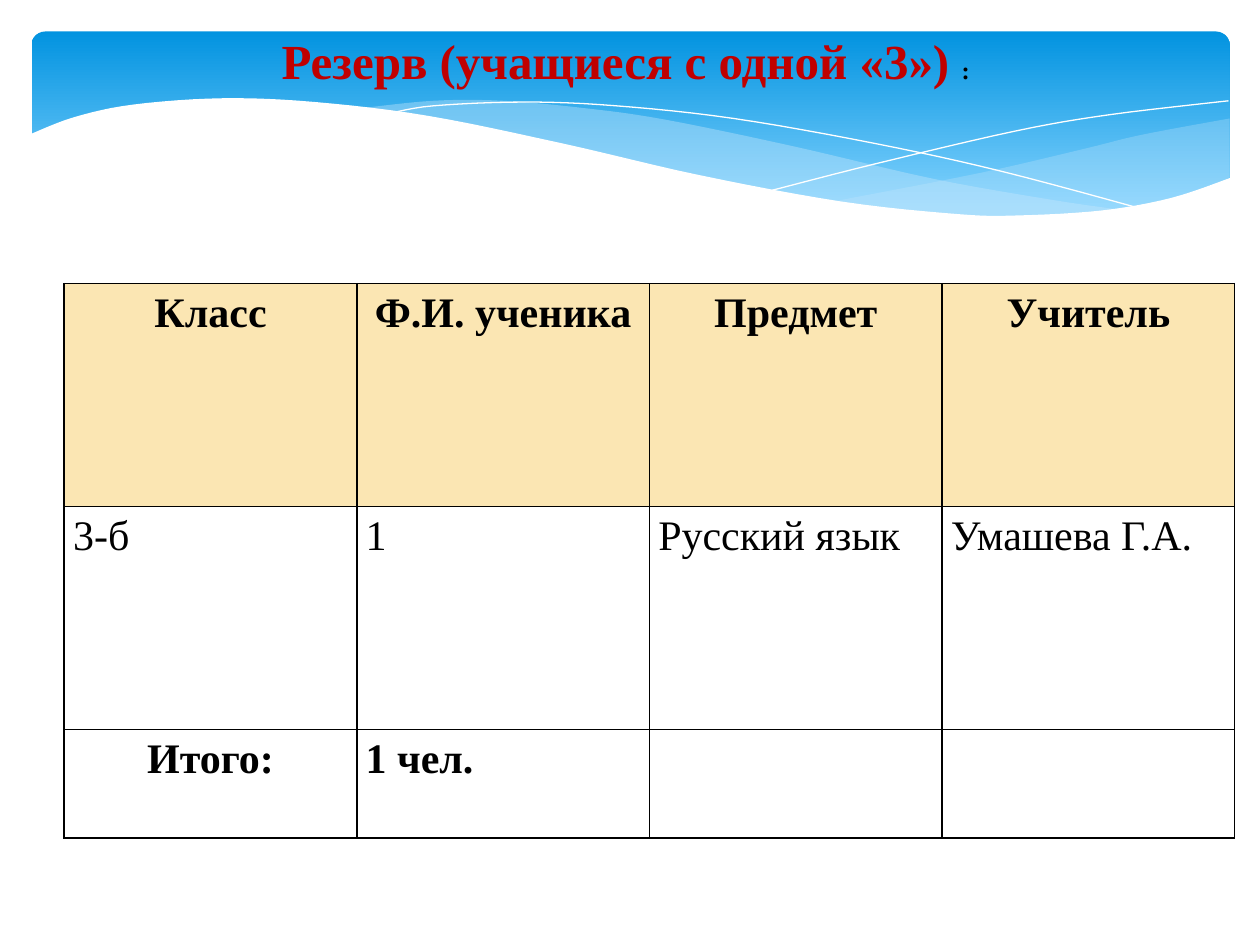
import itertools

import lxml.etree
import pptx
import pptx.dml.color
import pptx.enum.dml
import pptx.enum.shapes
import pptx.enum.text
import pptx.oxml
import pptx.oxml.ns
import pptx.util

ALIGN = pptx.enum.text.PP_ALIGN
CELL = pptx.util.Inches(0.1)
THEME = {
    "font": "Times New Roman", "title_size": 28, "mark_size": 14, "table_size": 24,
    "accent": "C00000", "text": "000000", "header": "FBE6B3", "white": "FFFFFF",
    "band": [(0, "0293E0"), (0.9, "83D3FE")], "wave": "C6E7FC",
}
RIGHT_WAVE = [
    [(95.1, 6.9), (88.1, 8.2), (83.6, 9.3), (75.4, 11.2), (63.6, 13.5)],
    [(63.6, 13.5), (70.7, 14.3), (77.8, 14.7), (83.8, 14.5), (90.3, 13.3), (95.1, 11.6)],
]
MIDDLE_WAVE = [
    [(26.1, 6.1), (31.9, 5.5), (37.4, 5.5), (44, 6.1), (50.3, 7), (60.4, 9.1),
     (71.6, 11.7), (81.2, 13.4), (86.8, 14.2)],
    [(86.8, 14.2), (78.2, 14.8), (71.1, 14.5), (62.5, 13.3), (54.1, 11.8), (42.4, 9.1),
     (33.7, 7.2), (26.1, 6.1)],
]
FALLING_LINE = [[(28.4, 6.5), (31.9, 5.9), (39.1, 5.6), (46.4, 5.9), (55.7, 6.9),
                 (67, 8.9), (77, 11.1), (88.2, 14.1)]]
RISING_LINE = [[(58.8, 12.6), (67, 10.5), (78.1, 7.9), (85.6, 6.6), (95, 5.5)]]
WHITE_WAVE = [
    [(-0.2, 8.2), (3.4, 6.8), (8.1, 5.8), (15.2, 5.3), (22.5, 5.6), (31.5, 6.7),
     (42.2, 8.9), (53, 11.4), (64.3, 13.5), (73.6, 14.5), (78.4, 14.6), (85, 14.2),
     (90.5, 13.2), (95.2, 11.6)],
    [(95.2, 19.9), (-0.2, 19.9)],
]


def rgb(name):
    """Return a colour from a theme key or a hex value."""
    return pptx.dml.color.RGBColor.from_string(THEME.get(name, name))


def grid(*cells):
    """Turn grid cells into whole lengths."""
    return [round(n * CELL) for n in cells]


def apply(obj, formats):
    """Set every attribute in a dict of format values."""
    for name, value in formats.items():
        setattr(obj, name, value)


def smooth(knots, steps=6):
    """Return points on a Catmull-Rom curve through the knots."""
    if len(knots) < 3:
        return knots
    padded = [knots[0], *knots, knots[-1]]
    points = [knots[0]]
    for a, b, c, d in zip(padded, padded[1:], padded[2:], padded[3:]):
        for t in (i / steps for i in range(1, steps + 1)):
            points.append(tuple(
                (2 * q + (r - p) * t + (2 * p - 5 * q + 4 * r - s) * t ** 2
                 + (3 * q - p - 3 * r + s) * t ** 3) / 2
                for p, q, r, s in zip(a, b, c, d)))
    return points


def add_curve(slide, box, runs, fill=None, alpha=None):
    """Draw a filled wave, or a white hairline when no fill is given."""
    points = [grid(box[0] + x, box[1] + y)
              for x, y in itertools.chain.from_iterable(map(smooth, runs))]
    builder = slide.shapes.build_freeform(*points[0], scale=1.0)
    builder.add_line_segments(points[1:], close=fill is not None)
    sp = builder.convert_to_shape()
    sp.shadow.inherit = False
    if fill is None:
        sp.fill.background()
        sp.line.color.rgb = rgb("white")
        sp.line.width = 0
        return
    sp.fill.solid()
    sp.fill.fore_color.rgb = rgb(fill)
    sp.line.fill.background()
    if alpha:
        color = sp.fill._xPr.find(".//" + pptx.oxml.ns.qn("a:srgbClr"))
        lxml.etree.SubElement(color, pptx.oxml.ns.qn("a:alpha"), val=str(alpha * 1000))


def add_banner(slide, box):
    """Draw the blue gradient band and the waves that cut it."""
    sp = slide.shapes.add_shape(
        pptx.enum.shapes.MSO_SHAPE.ROUNDED_RECTANGLE, *grid(*box))
    sp.adjustments[0] = 0.07
    sp.shadow.inherit = False
    sp.line.fill.background()
    sp.fill.gradient()
    sp.fill.gradient_angle = 270
    for stop, (position, color) in zip(sp.fill.gradient_stops, THEME["band"]):
        stop.position = position
        stop.color.rgb = rgb(color)
    add_curve(slide, box, RIGHT_WAVE, "wave", 29)
    add_curve(slide, box, MIDDLE_WAVE, "wave", 40)
    add_curve(slide, box, FALLING_LINE)
    add_curve(slide, box, RISING_LINE)
    add_curve(slide, box, WHITE_WAVE, "white")


def add_run(p, text, size, color, bold):
    """Add one formatted run to a paragraph."""
    r = p.add_run()
    r.text = text
    apply(r.font, {"name": THEME["font"], "size": pptx.util.Pt(THEME[size]), "bold": bold})
    r.font.color.rgb = rgb(color)


def add_title(slide, box):
    """Place the title in front of the banner."""
    sp = slide.shapes.title
    apply(sp, dict(zip(("left", "top", "width", "height"), grid(*box))))
    slide.shapes._spTree.append(sp._element)
    tf = sp.text_frame
    apply(tf, {"word_wrap": False,
               "auto_size": pptx.enum.text.MSO_AUTO_SIZE.SHAPE_TO_FIT_TEXT,
               "vertical_anchor": pptx.enum.text.MSO_ANCHOR.MIDDLE})
    p = tf.paragraphs[0]
    p.alignment = ALIGN.CENTER
    add_run(p, "Резерв (учащиеся с одной «3») ", "title_size", "accent", True)
    add_run(p, ":", "mark_size", "text", True)


def add_borders(cell):
    """Give a cell thin black borders on all sides."""
    tc_pr = cell._tc.get_or_add_tcPr()
    for side in "LRTB":
        tc_pr.append(pptx.oxml.parse_xml(
            f'<a:ln{side} {pptx.oxml.ns.nsdecls("a")} w="12700"><a:solidFill>'
            f'<a:srgbClr val="{THEME["text"]}"/></a:solidFill></a:ln{side}>'))


def add_reserve_table(slide, box, heights):
    """Place the table of pupils with its header and total rows."""
    rows = [["Класс", "Ф.И. ученика", "Предмет", "Учитель"],
            ["3-б", "1", "Русский язык", "Умашева Г.А."],
            ["Итого:", "1 чел.", "", ""]]
    table = slide.shapes.add_table(len(rows), len(rows[0]), *grid(*box)).table
    apply(table, {"first_row": False, "horz_banding": False})
    for row, height in zip(table.rows, grid(*heights)):
        row.height = height
    for i, j in itertools.product(range(len(rows)), range(len(rows[0]))):
        cell = table.cell(i, j)
        add_borders(cell)
        if i == 0:
            cell.fill.solid()
            cell.fill.fore_color.rgb = rgb("header")
        else:
            cell.fill.background()
        side = pptx.util.Inches(0.07)
        apply(cell, {"margin_left": side, "margin_right": side,
                     "margin_top": 0, "margin_bottom": 0})
        if rows[i][j]:
            p = cell.text_frame.paragraphs[0]
            centred = i == 0 or (i == 2 and j == 0)
            apply(p, {"alignment": ALIGN.CENTER if centred else ALIGN.LEFT,
                      "line_spacing": 1.15})
            add_run(p, rows[i][j], "table_size", "text", i != 1)


def main():
    """Build and save the slide."""
    prs = pptx.Presentation()
    apply(prs, {"slide_width": 100 * CELL, "slide_height": 75 * CELL})
    slide = prs.slides.add_slide(prs.slide_layouts[5])
    add_banner(slide, (2.5, 2.5, 95.1, 15.6))
    add_title(slide, (20.9, 1.9, 57.5, 5.7))
    add_reserve_table(slide, (5.1, 22.5, 92.9, 44.1), (17.7, 17.7, 8.6))
    prs.save("out.pptx")


if __name__ == "__main__":
    main()
